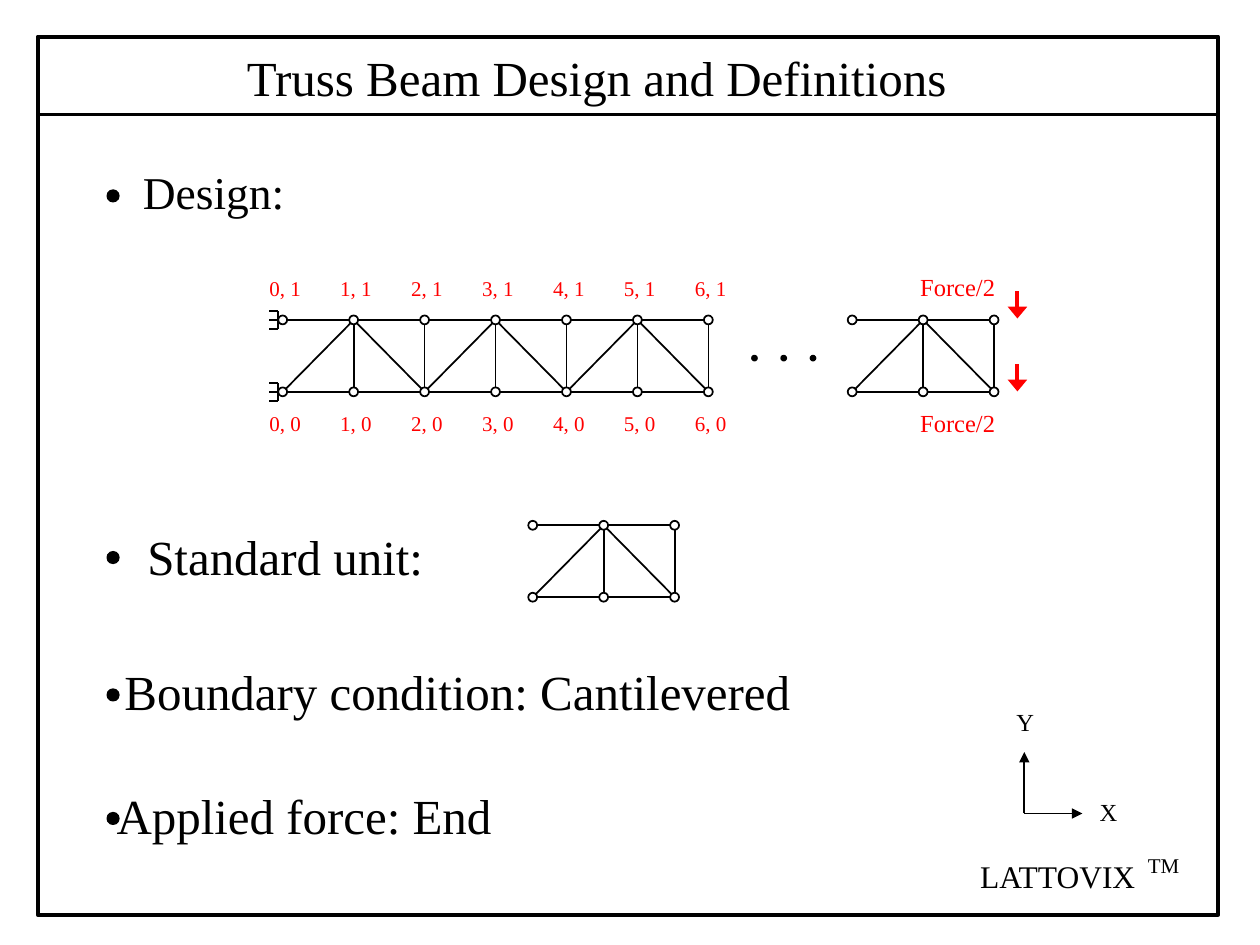
"""Build the truss beam design slide with its beam, unit cell and axes."""
from lxml.etree import SubElement
from pptx import Presentation
from pptx.dml.color import RGBColor
from pptx.enum.shapes import MSO_CONNECTOR, MSO_SHAPE
from pptx.oxml.ns import qn
from pptx.util import Cm, Pt

COLOURS = {"ink": "000000", "paper": "FFFFFF", "load": "FF0000"}
SERIF = "Times New Roman"
BAY = 1.43
DEPTH = 1.45


def colour(name):
    return RGBColor.from_string(COLOURS[name])


def add_text(page, left, top, width, height, spans, ink="ink", inset=0.25):
    box = page.shapes.add_textbox(Cm(left), Cm(top), Cm(width), Cm(height))
    frame = box.text_frame
    frame.word_wrap = True
    frame.margin_left = Cm(inset)
    para = frame.paragraphs[0]
    for text, size, font in spans:
        span = para.add_run()
        span.text = text
        span.font.size = Pt(size)
        span.font.name = font
        span.font.color.rgb = colour(ink)


def add_line(page, start, end, ink="ink", weight=1, head=None):
    line = page.shapes.add_connector(
        MSO_CONNECTOR.STRAIGHT, *(Cm(value) for value in (*start, *end)))
    line.line.color.rgb = colour(ink)
    line.line.width = Pt(weight)
    if head:
        SubElement(line.line._get_or_add_ln(), qn("a:tailEnd"),
                   type="triangle", w=head, len="med")
    SubElement(line._element.spPr, qn("a:effectLst"))


def add_dot(page, x, y, size, fill="ink"):
    dot = page.shapes.add_shape(MSO_SHAPE.OVAL, Cm(x - size / 2),
                                Cm(y - size / 2), Cm(size), Cm(size))
    dot.shadow.inherit = False
    dot.fill.solid()
    dot.fill.fore_color.rgb = colour(fill)
    dot.line.color.rgb = colour("ink")
    dot.line.width = Pt(1)


def add_frame(page):
    frame = page.shapes.add_shape(MSO_SHAPE.RECTANGLE, Cm(0.76), Cm(0.74),
                                  Cm(23.8), Cm(17.7))
    frame.shadow.inherit = False
    frame.fill.background()
    frame.line.color.rgb = colour("ink")
    frame.line.width = Pt(2.25)
    add_line(page, (0.76, 2.31), (24.56, 2.31), weight=2)


def add_truss(page, left, top, bays):
    upper = [(left + BAY * i, top) for i in range(bays + 1)]
    lower = [(x, top + DEPTH) for x, _ in upper]
    for i in range(bays):
        add_line(page, upper[i], upper[i + 1])
        add_line(page, lower[i], lower[i + 1])
        add_line(page, upper[i + 1], lower[i + 1])
        first, second = (upper, lower) if i % 2 else (lower, upper)
        add_line(page, first[i], second[i + 1])
    for x, y in upper + lower:
        add_dot(page, x, y, 0.18, "paper")


def add_support(page, x, y):
    add_line(page, (x, y - 0.18), (x, y + 0.18))
    for offset in (-0.18, 0, 0.18):
        add_line(page, (x - 0.17, y + offset), (x, y + offset))


def add_beam(page):
    left, top, bays = 5.7, 6.45, 6
    add_truss(page, left, top, bays)
    for y in (top, top + DEPTH):
        add_support(page, left - 0.1, y)
    for row, label_top in ((1, 5.42), (0, 8.16)):
        for i in range(bays + 1):
            add_text(page, left - 0.52 + BAY * i, label_top, 1.42, 0.76,
                     [(f"{i}, {row}", 12, SERIF)], "load")
    for i in range(3):
        add_dot(page, 15.21 + 0.59 * i, 7.22, 0.1)
    add_truss(page, 17.18, top, 2)
    for label_top, arrow_top in ((5.36, 5.87), (8.1, 7.34)):
        add_text(page, 18.3, label_top, 2.2, 0.86,
                 [("Force/2", 14, SERIF)], "load")
        add_line(page, (20.51, arrow_top), (20.51, arrow_top + 0.55),
                 "load", 2.25, "lg")


def add_axes(page):
    origin = (20.65, 16.4)
    add_line(page, origin, (20.65, 15.16), head="med")
    add_line(page, origin, (21.82, 16.4), head="med")
    add_text(page, 21.92, 15.95, 1.07, 0.86, [("X", 14, SERIF)])
    add_text(page, 20.24, 14.12, 1.07, 0.86, [("Y", 14, SERIF)])


def main():
    deck = Presentation()
    deck.slide_width, deck.slide_height = Cm(25.4), Cm(19.05)
    page = deck.slides.add_slide(deck.slide_layouts[6])
    add_frame(page)
    add_text(page, 3.45, 0.84, 18.67, 1.45,
             [("Truss Beam Design and Definitions", 28, SERIF)], inset=1.53)
    topics = [
        ("Design:", 26, 2.13, 3.18, 4.6, 0.75, 3.95),
        ("Standard unit:", 28, 2.29, 10.49, 7.24, 0.68, 11.24),
        ("Boundary condition: Cantilevered", 28, 1.75, 13.21, 15.98, 0.76, 14.01),
        ("Applied force: End", 28, 2.03, 15.72, 9.47, 0.32, 16.5),
    ]
    for text, size, left, top, width, inset, bullet_y in topics:
        add_text(page, left, top, width, 1.45, [(text, size, SERIF)], inset=inset)
        add_dot(page, 2.28, bullet_y, 0.23)
    add_beam(page)
    add_truss(page, 10.74, 10.59, 2)
    add_axes(page)
    add_text(page, 19.51, 17.15, 3.86, 1.02, [("LATTOVIX", 18, SERIF)])
    add_text(page, 22.89, 16.84, 1.3, 1.02,
             [("TM", 12, SERIF), (" ", 18, "Calibri")])
    deck.save("out.pptx")


if __name__ == "__main__":
    main()
